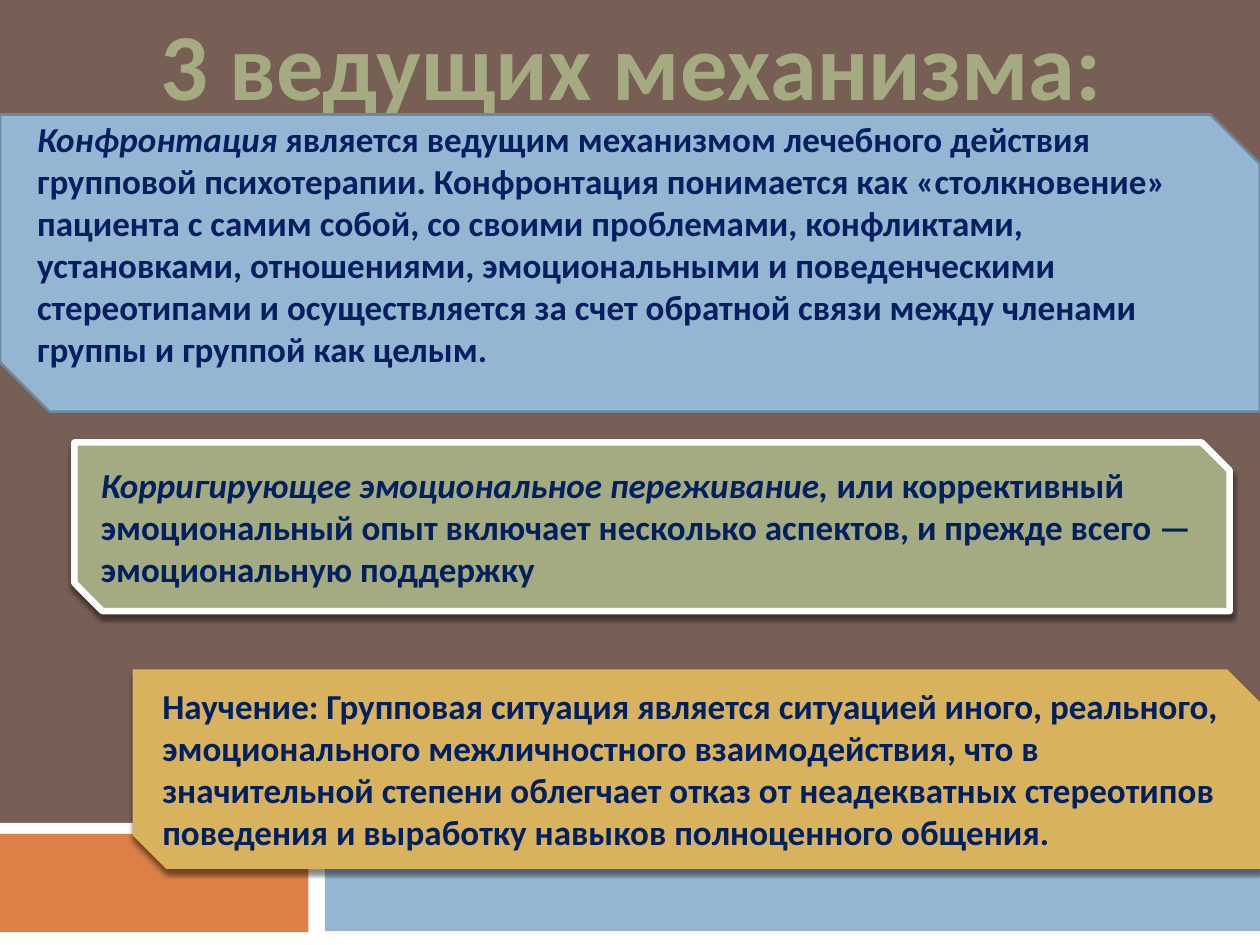
from lxml import etree
from pptx import Presentation
from pptx.dml.color import RGBColor
from pptx.enum.shapes import MSO_SHAPE as Shape
from pptx.enum.text import MSO_ANCHOR as Anchor, PP_ALIGN as Align
from pptx.oxml.ns import qn
from pptx.util import Cm, Pt

HUES = {
    "brown": "775F55", "white": "FFFFFF", "orange": "DD8047", "blue": "94B6D2",
    "green": "A5AB81", "gold": "D8B25C", "slate": "6D879B", "navy": "002060",
}


def hue(name):
    return RGBColor.from_string(HUES[name])


def drop(shape):
    """Add a soft shadow that falls straight down."""
    fx = etree.SubElement(shape._element.spPr, qn("a:effectLst"))
    cast = etree.SubElement(fx, qn("a:outerShdw"), blurRad=str(Pt(3)),
                            dist=str(Pt(2.4)), dir="5400000", rotWithShape="0")
    tint = etree.SubElement(cast, qn("a:srgbClr"), val="000000")
    etree.SubElement(tint, qn("a:alpha"), val="45000")


deck = Presentation()
deck.slide_width, deck.slide_height = Cm(25.4), Cm(19.05)
slide = deck.slides.add_slide(deck.slide_layouts[6])
slide.background.fill.solid()
slide.background.fill.fore_color.rgb = hue("brown")

# Footer bands
bands = [
    ("white", 0, 16.59, 25.4, 2.46),
    ("orange", 0, 16.81, 6.22, 1.98),
    ("blue", 6.55, 16.79, 18.85, 1.98),
]
for fill, *box in bands:
    band = slide.shapes.add_shape(Shape.RECTANGLE, *map(Cm, box))
    band.shadow.inherit = False
    band.fill.solid()
    band.fill.fore_color.rgb = hue(fill)
    band.line.fill.background()

# Title
title = slide.shapes.add_textbox(Cm(2.9), Cm(0), Cm(19.66), Cm(2.57))
title.text_frame.word_wrap = False
para = title.text_frame.paragraphs[0]
para.text = "3 ведущих механизма:"
para.alignment = Align.CENTER
para.font.name, para.font.size, para.font.bold = "Calibri", Pt(54), True
para.font.color.rgb = hue("green")

# Cards: box, fill, line, line width, shadow, bottom inset, italic lead, text
cards = [
    ((0, 2.31, 25.4, 5.99), "blue", "slate", 1.5, False, 0.9, "Конфронтация ",
     "является ведущим механизмом лечебного действия групповой психотерапии. "
     "Конфронтация понимается как «столкновение» пациента с самим собой, со "
     "своими проблемами, конфликтами, установками, отношениями, эмоциональными "
     "и поведенческими стереотипами и осуществляется за счет обратной связи "
     "между членами группы и группой как целым."),
    ((1.5, 8.92, 23.29, 3.4), "green", "white", 3.75, True, 0.13,
     "Корригирующее эмоциональное переживание, ",
     "или коррективный эмоциональный опыт включает несколько аспектов, и "
     "прежде всего — эмоциональную поддержку"),
    ((2.69, 13.51, 22.71, 3.99), "gold", "gold", 0.79, True, 0.13, "",
     "Научение: Групповая ситуация является ситуацией иного, реального, "
     "эмоционального межличностного взаимодействия, что в значительной степени "
     "облегчает отказ от неадекватных стереотипов поведения и выработку навыков "
     "полноценного общения."),
]
for box, fill, edge, width, cast, inset, lead, text in cards:
    card = slide.shapes.add_shape(Shape.SNIP_2_DIAG_RECTANGLE, *map(Cm, box))
    card.fill.solid()
    card.fill.fore_color.rgb = hue(fill)
    card.line.color.rgb = hue(edge)
    card.line.width = Pt(width)
    if cast:
        drop(card)
    else:
        card.shadow.inherit = False
    frame = card.text_frame
    frame.word_wrap = True
    frame.vertical_anchor = Anchor.MIDDLE
    frame.margin_bottom = Cm(inset)
    para = frame.paragraphs[0]
    para.alignment = Align.LEFT
    para.font.name, para.font.size, para.font.bold = "Calibri", Pt(20), True
    para.font.color.rgb = hue("navy")
    if lead:
        run = para.add_run()
        run.text = lead
        run.font.italic = True
    para.add_run().text = text

deck.save("out.pptx")
